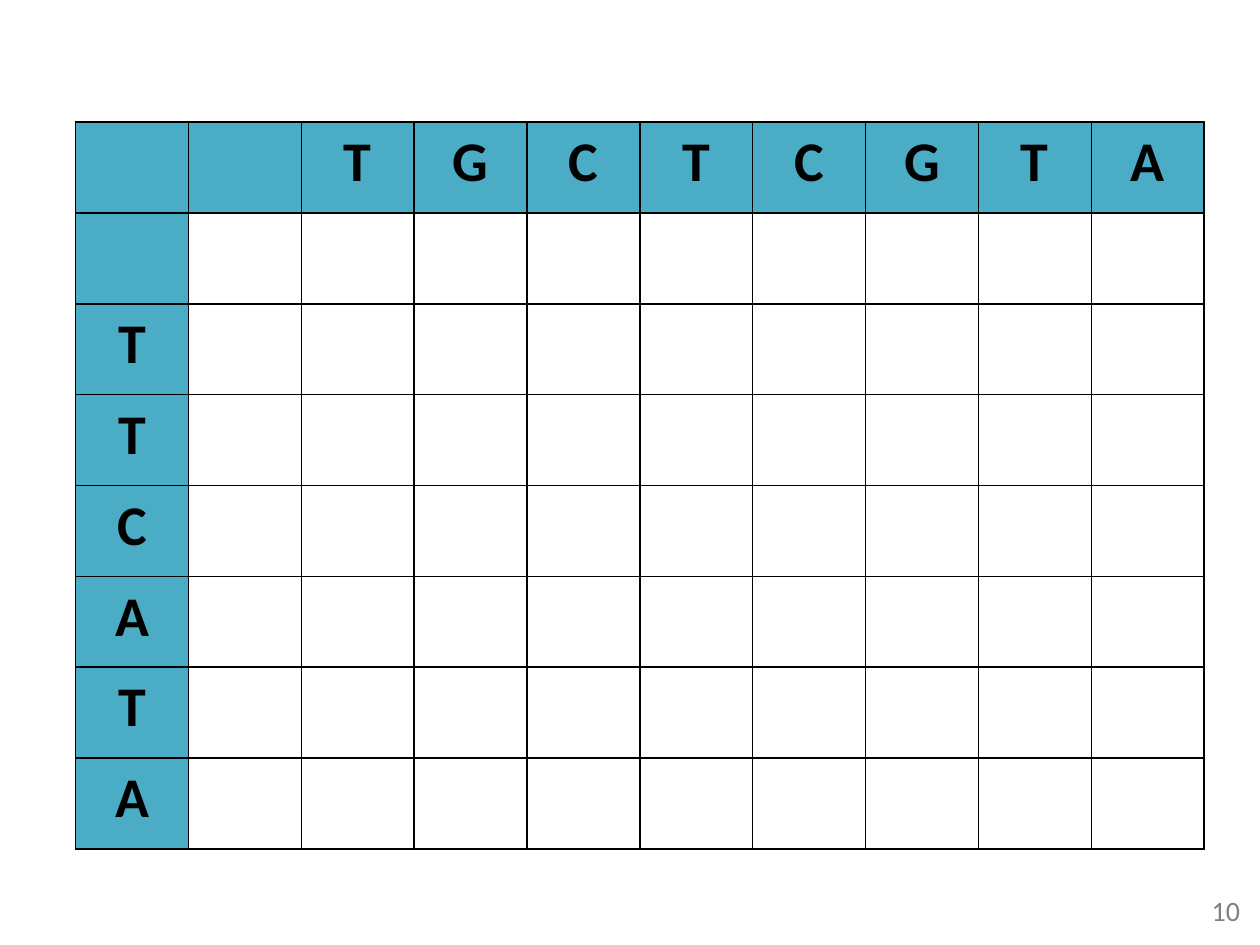
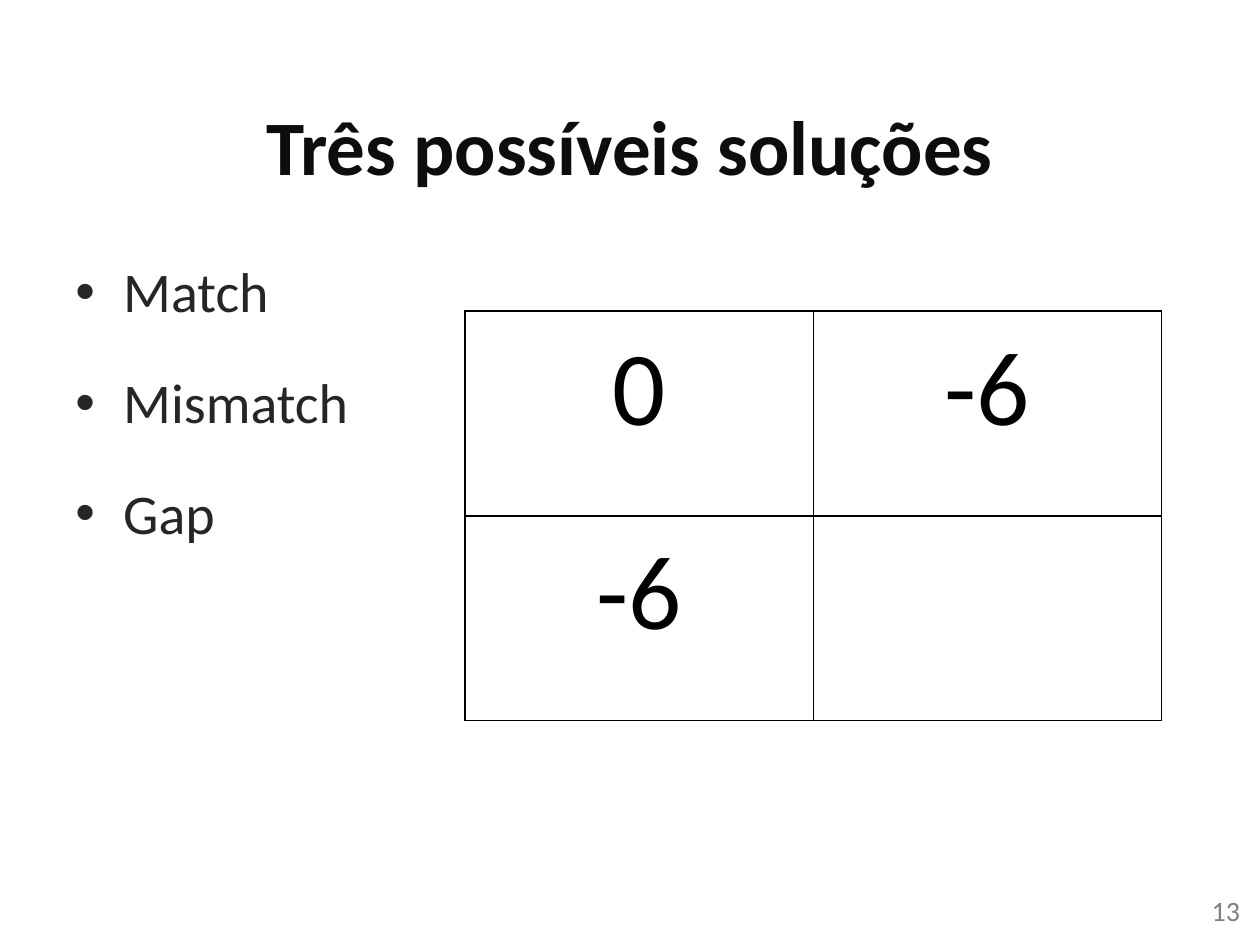
from lxml import etree
from pptx import Presentation
from pptx.dml.color import RGBColor
from pptx.enum.text import MSO_ANCHOR, PP_ALIGN
from pptx.oxml.ns import qn
from pptx.util import Inches, Pt

CENTER, RIGHT, LEFT = PP_ALIGN.CENTER, PP_ALIGN.RIGHT, PP_ALIGN.LEFT
TOP, MIDDLE = MSO_ANCHOR.TOP, MSO_ANCHOR.MIDDLE
FONT = "Calibri"
COLORS = {
    "white": "FFFFFF",
    "black": "000000",
    "header": "4BACC6",
    "title": "0D0D0D",
    "body": "262626",
    "number": "808080",
}
FORMATS = {
    "title": {"size": Pt(44), "bold": True},
    "body": {"size": Pt(32), "bold": False},
    "number": {"size": Pt(16), "bold": False},
    "base": {"size": Pt(32), "bold": True},
    "score": {"size": Pt(60), "bold": False},
}


def color(name):
    return RGBColor.from_string(COLORS[name])


def write(para, text, style, align):
    para.alignment = align
    span = para.add_run()
    span.text = text
    for name, value in {"name": FONT, **FORMATS[style]}.items():
        setattr(span.font, name, value)
    span.font.color.rgb = color(style if style in COLORS else "black")


def add_box(page, place, anchor=TOP):
    frame = page.shapes.add_textbox(*map(Inches, place)).text_frame
    frame.word_wrap = True
    frame.vertical_anchor = anchor
    return frame


def add_title(page, text):
    frame = add_box(page, (0.5, 0.52, 9, 1.25), MIDDLE)
    write(frame.paragraphs[0], text, "title", CENTER)


def add_page_number(page, number):
    frame = add_box(page, (7.61, 7.04, 2.33, 0.4))
    write(frame.paragraphs[0], str(number), "number", RIGHT)


def add_bullets(page, place, items):
    frame = add_box(page, place)
    for index, item in enumerate(items):
        para = frame.add_paragraph() if index else frame.paragraphs[0]
        properties = para._p.get_or_add_pPr()
        properties.set("marL", str(Inches(0.38)))
        properties.set("indent", str(-Inches(0.38)))
        etree.SubElement(properties, qn("a:buFont"), typeface="Arial")
        etree.SubElement(properties, qn("a:buChar"), char="•")
        para.space_before = Pt(25 if index else 0)
        write(para, item, "body", LEFT)


def add_borders(cell):
    properties = cell._tc.get_or_add_tcPr()
    for side in ("a:lnL", "a:lnR", "a:lnT", "a:lnB"):
        line = etree.SubElement(properties, qn(side), w=str(Pt(1)))
        fill = etree.SubElement(line, qn("a:solidFill"))
        etree.SubElement(fill, qn("a:srgbClr"), val=COLORS["black"])


def add_grid(page, place, rows, style, margins=(0.1, 0.05), has_headers=False):
    size = len(rows), len(rows[0])
    table = page.shapes.add_table(*size, *map(Inches, place)).table
    table.first_row = table.horz_banding = False
    side, end = map(Inches, margins)
    spacing = {"margin_left": side, "margin_right": side,
               "margin_top": end, "margin_bottom": end}
    for row_index, row in enumerate(rows):
        for column_index, text in enumerate(row):
            cell = table.cell(row_index, column_index)
            for name, value in spacing.items():
                setattr(cell, name, value)
            add_borders(cell)
            is_header = has_headers and 0 in (row_index, column_index)
            cell.fill.solid()
            cell.fill.fore_color.rgb = color("header" if is_header else "white")
            if text:
                write(cell.text_frame.paragraphs[0], text, style, CENTER)


def build_alignment_page(page):
    across, down = "TGCTCGTA", "TTCATA"
    blanks = [""] * (len(across) + 1)
    rows = [["", "", *across]] + [[base, *blanks] for base in ["", *down]]
    add_grid(page, (0.6, 0.97, 8.96, 5.77), rows, "base", has_headers=True)
    add_page_number(page, 10)


def build_solutions_page(page):
    add_title(page, "Três possíveis soluções")
    add_bullets(page, (0.5, 1.99, 9, 4.95), ["Match", "Mismatch", "Gap"])
    add_page_number(page, 13)
    scores = [["0", "-6"], ["-6", ""]]
    add_grid(page, (3.69, 2.47, 5.53, 3.25), scores, "score", (0.23, 0.11))


def main():
    deck = Presentation()
    deck.slide_width, deck.slide_height = Inches(10), Inches(7.5)
    for build in (build_alignment_page, build_solutions_page):
        page = deck.slides.add_slide(deck.slide_layouts[6])
        page.background.fill.solid()
        page.background.fill.fore_color.rgb = color("white")
        build(page)
    deck.save("out.pptx")


if __name__ == "__main__":
    main()
